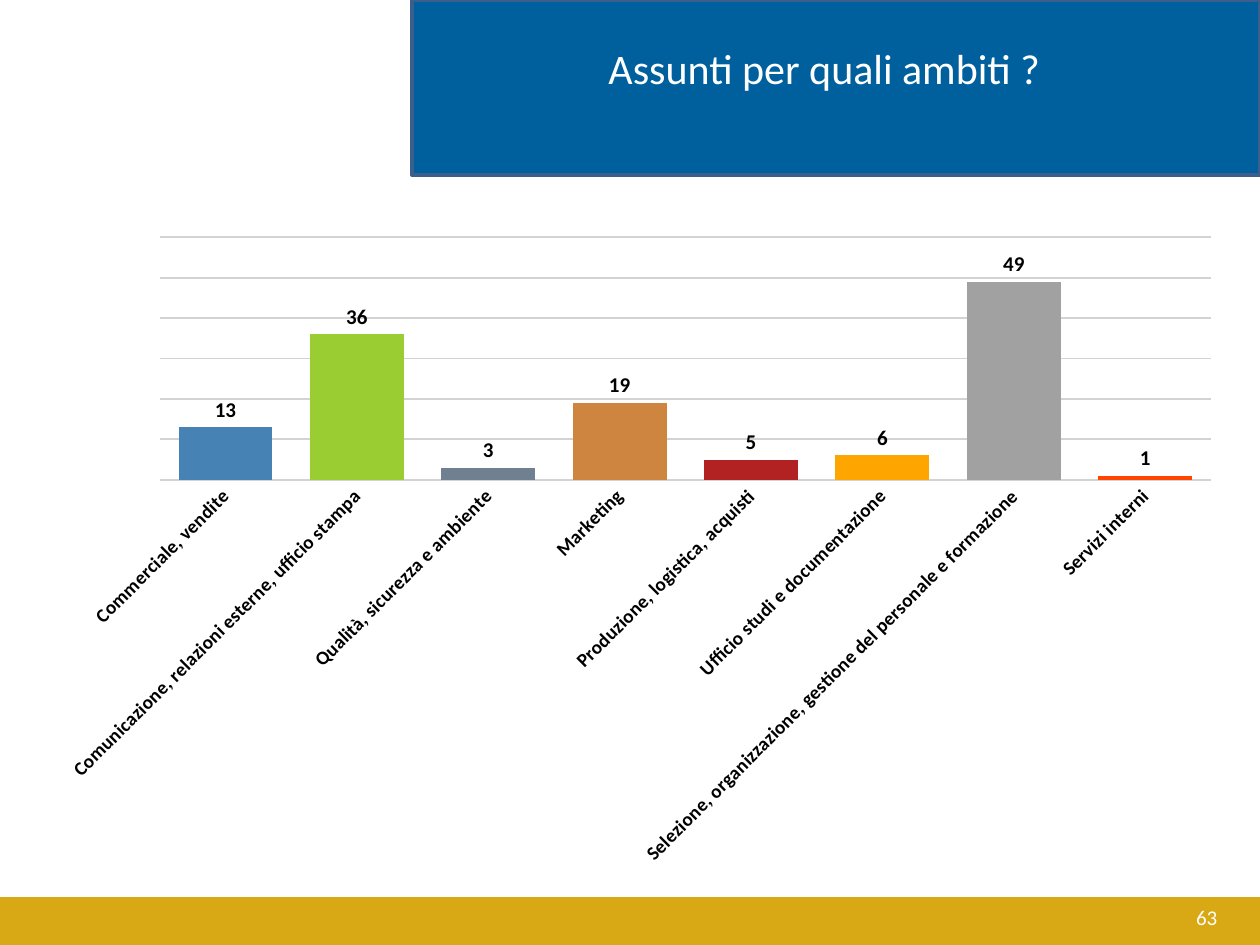
from dataclasses import dataclass

from lxml import etree
from pptx import Presentation
from pptx.chart.data import CategoryChartData
from pptx.dml.color import RGBColor
from pptx.enum.chart import XL_CHART_TYPE, XL_LABEL_POSITION, XL_TICK_MARK
from pptx.enum.shapes import MSO_SHAPE
from pptx.enum.text import MSO_ANCHOR, PP_ALIGN
from pptx.oxml.ns import qn
from pptx.util import Inches, Pt

FONT = "Calibri"
WHITE = RGBColor(0xFF, 0xFF, 0xFF)
BLACK = RGBColor(0x00, 0x00, 0x00)
GOLD = RGBColor(0xD8, 0xA9, 0x15)
BLUE = RGBColor(0x00, 0x60, 0x9D)
BLUE_EDGE = RGBColor(0x3A, 0x5F, 0x8C)
GRID = RGBColor(0xD3, 0xD3, 0xD3)

RECTANGLE = MSO_SHAPE.RECTANGLE
COLUMNS = XL_CHART_TYPE.COLUMN_CLUSTERED
OUTSIDE_END = XL_LABEL_POSITION.OUTSIDE_END
TICK_INSIDE = XL_TICK_MARK.INSIDE
TICK_NONE = XL_TICK_MARK.NONE
CENTER, RIGHT = PP_ALIGN.CENTER, PP_ALIGN.RIGHT
TOP, MIDDLE = MSO_ANCHOR.TOP, MSO_ANCHOR.MIDDLE


@dataclass(frozen=True)
class Box:
    left: float
    top: float
    width: float
    height: float

    def lengths(self) -> tuple:
        return tuple(Inches(v) for v in (self.left, self.top, self.width, self.height))


@dataclass(frozen=True)
class Field:
    name: str
    hires: int
    color: RGBColor


FIELDS = [
    Field("Commerciale, vendite", 13, RGBColor(0x46, 0x82, 0xB4)),
    Field("Comunicazione, relazioni esterne, ufficio stampa", 36, RGBColor(0x9A, 0xCD, 0x32)),
    Field("Qualità, sicurezza e ambiente", 3, RGBColor(0x70, 0x80, 0x90)),
    Field("Marketing", 19, RGBColor(0xCD, 0x85, 0x3F)),
    Field("Produzione, logistica, acquisti", 5, RGBColor(0xB2, 0x22, 0x22)),
    Field("Ufficio studi e documentazione", 6, RGBColor(0xFF, 0xA5, 0x00)),
    Field("Selezione, organizzazione, gestione del personale e formazione", 49,
          RGBColor(0xA1, 0xA1, 0xA1)),
    Field("Servizi interni", 1, RGBColor(0xFF, 0x45, 0x00)),
]


def add_band(slide, box: Box, fill: RGBColor, edge: RGBColor | None = None) -> None:
    shape = slide.shapes.add_shape(RECTANGLE, *box.lengths())
    shape.shadow.inherit = False
    shape.fill.solid()
    shape.fill.fore_color.rgb = fill
    if edge is None:
        shape.line.fill.background()
    else:
        shape.line.color.rgb = edge
        shape.line.width = Pt(2)


def format_font(font, size: float, color: RGBColor, bold: bool = False) -> None:
    font.name = FONT
    font.size = Pt(size)
    font.bold = bold
    font.color.rgb = color


def add_text(slide, box: Box, text: str, *, size: float, align: PP_ALIGN,
             anchor: MSO_ANCHOR = TOP, color: RGBColor = WHITE) -> None:
    frame = slide.shapes.add_textbox(*box.lengths()).text_frame
    frame.word_wrap = True
    frame.vertical_anchor = anchor
    paragraph = frame.paragraphs[0]
    paragraph.alignment = align
    run = paragraph.add_run()
    run.text = text
    format_font(run.font, size, color)


def set_plot_layout(chart, area: Box) -> None:
    """Fix the inner plot area, given as fractions of the chart."""
    plot_area = chart._chartSpace.chart.plotArea
    for old in plot_area.findall(qn("c:layout")):
        plot_area.remove(old)
    layout = etree.Element(qn("c:layout"))
    plot_area.insert(0, layout)
    manual = etree.SubElement(layout, qn("c:manualLayout"))
    settings = {"layoutTarget": "inner", "xMode": "edge", "yMode": "edge",
                "x": area.left, "y": area.top, "w": area.width, "h": area.height}
    for tag, value in settings.items():
        etree.SubElement(manual, qn(f"c:{tag}")).set("val", str(value))


def add_hires_chart(slide, box: Box, fields: list[Field]) -> None:
    data = CategoryChartData(number_format="0")
    data.categories = [field.name for field in fields]
    data.add_series("Series 1", [field.hires for field in fields])
    chart = slide.shapes.add_chart(COLUMNS, *box.lengths(), data).chart
    chart.has_legend = False
    chart.has_title = False
    format_font(chart.font, 11, BLACK)
    set_plot_layout(chart, Box(0.1, 0.02, 0.88, 0.37))

    category_axis = chart.category_axis
    category_axis.major_tick_mark = TICK_INSIDE
    category_axis.minor_tick_mark = TICK_NONE
    category_axis.format.line.fill.background()
    format_font(category_axis.tick_labels.font, 11, BLACK, bold=True)
    label_body = category_axis._element.find(qn("c:txPr")).find(qn("a:bodyPr"))
    label_body.set("rot", str(-45 * 60000))
    label_body.set("vert", "horz")

    value_axis = chart.value_axis
    value_axis.minimum_scale = 0
    value_axis.maximum_scale = 60
    value_axis.major_unit = 10
    value_axis.visible = False
    value_axis.has_major_gridlines = True
    value_axis.major_gridlines.format.line.color.rgb = GRID
    value_axis.major_gridlines.format.line.width = Pt(1)

    plot = chart.plots[0]
    plot.gap_width = 40
    plot.vary_by_categories = False
    series = plot.series[0]
    for index, field in enumerate(fields):
        fill = series.points[index].format.fill
        fill.solid()
        fill.fore_color.rgb = field.color
    labels = series.data_labels
    labels.show_value = True
    labels.position = OUTSIDE_END
    labels.number_format = "0"
    labels.number_format_is_linked = False
    format_font(labels.font, 12, BLACK, bold=True)


def main() -> None:
    presentation = Presentation()
    presentation.slide_width = Inches(10)
    presentation.slide_height = Inches(7.5)
    slide = presentation.slides.add_slide(presentation.slide_layouts[6])

    add_band(slide, Box(0, 7.12, 10, 0.38), GOLD)
    add_band(slide, Box(3.27, 0, 6.73, 1.39), BLUE, BLUE_EDGE)
    add_text(slide, Box(3.35, 0.29, 6.46, 0.5), "Assunti per quali ambiti ? ",
             size=24, align=CENTER)
    add_text(slide, Box(7.43, 7.08, 2.33, 0.4), "63",
             size=12, align=RIGHT, anchor=MIDDLE)
    add_hires_chart(slide, Box(0.32, 1.78, 9.48, 5.2), FIELDS)

    presentation.save("out.pptx")


if __name__ == "__main__":
    main()
